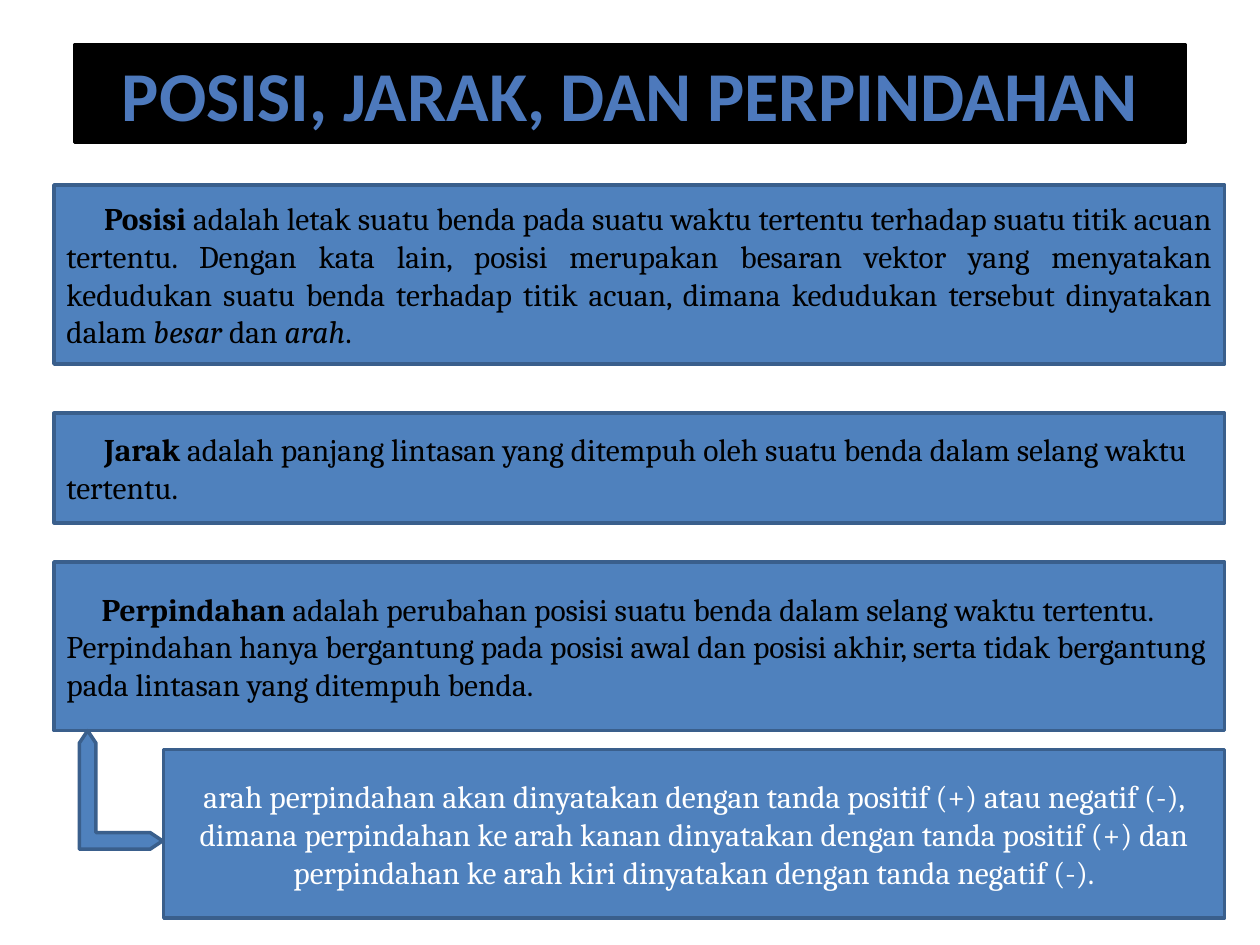
from pptx import Presentation
from pptx.dml.color import RGBColor
from pptx.enum.shapes import MSO_SHAPE
from pptx.enum.text import MSO_ANCHOR, MSO_AUTO_SIZE, PP_ALIGN
from pptx.util import Cm, Pt

RECTANGLE, CORNER_ARROW = MSO_SHAPE.RECTANGLE, MSO_SHAPE.LEFT_UP_ARROW
LEFT, CENTER, JUSTIFY = PP_ALIGN.LEFT, PP_ALIGN.CENTER, PP_ALIGN.JUSTIFY
MIDDLE = MSO_ANCHOR.MIDDLE
NO_AUTOFIT = MSO_AUTO_SIZE.NONE

BLACK = RGBColor(0x00, 0x00, 0x00)
WHITE = RGBColor(0xFF, 0xFF, 0xFF)
BLUE = RGBColor(0x4F, 0x81, 0xBD)
DARK_BLUE = RGBColor(0x3A, 0x5F, 0x8C)
TITLE_BLUE = RGBColor(0x4D, 0x79, 0xBC)

TITLE_ONLY = 5
BOX_LEFT, BOX_WIDTH = 1.09, 23.6
NOTE_LEFT = 3.3


def add_text(paragraph, text, font="Cambria", size=18, color=BLACK, bold=False, italic=False):
    run = paragraph.add_run()
    run.text = text
    run.font.name = font
    run.font.size = Pt(size)
    run.font.color.rgb = color
    run.font.bold = bold
    run.font.italic = italic


class SlideBuilder:
    line_width = Pt(2)

    def __init__(self, slide):
        self.slide = slide

    def paint(self, shape, fill, line):
        shape.fill.solid()
        shape.fill.fore_color.rgb = fill
        shape.line.color.rgb = line
        shape.line.width = self.line_width

    def title(self, text, left, top, width, height):
        heading = self.slide.shapes.title
        heading.left, heading.top = Cm(left), Cm(top)
        heading.width, heading.height = Cm(width), Cm(height)
        self.paint(heading, BLACK, BLACK)
        frame = heading.text_frame
        frame.auto_size = NO_AUTOFIT
        frame.vertical_anchor = MIDDLE
        frame.paragraphs[0].alignment = CENTER
        add_text(frame.paragraphs[0], text, font="Calibri", size=40,
                 color=TITLE_BLUE, bold=True)

    def shape(self, kind, left, top, width, height):
        shape = self.slide.shapes.add_shape(kind, Cm(left), Cm(top), Cm(width), Cm(height))
        shape.shadow.inherit = False
        self.paint(shape, BLUE, DARK_BLUE)
        return shape

    def box(self, parts, top, height, left=BOX_LEFT, align=LEFT, indent=0, color=BLACK):
        """Draw a box that ends at the common right edge; parts are (text, format) pairs."""
        width = BOX_LEFT + BOX_WIDTH - left
        frame = self.shape(RECTANGLE, left, top, width, height).text_frame
        frame.word_wrap = True
        frame.vertical_anchor = MIDDLE
        paragraph = frame.paragraphs[0]
        paragraph.alignment = align
        if indent:
            properties = paragraph._p.get_or_add_pPr()
            properties.set("marL", "0")
            properties.set("indent", str(Cm(indent)))
        for text, style in parts:
            add_text(paragraph, text, color=color, **style)

    def corner_arrow(self, left, top, width, height, adjustments):
        arrow = self.shape(CORNER_ARROW, left, top, width, height)
        for index, value in enumerate(adjustments):
            arrow.adjustments[index] = value
        arrow._element.spPr.get_or_add_xfrm().set("flipH", "1")


def main():
    presentation = Presentation()
    presentation.slide_width, presentation.slide_height = Cm(25.4), Cm(19.05)
    layout = presentation.slide_layouts[TITLE_ONLY]
    builder = SlideBuilder(presentation.slides.add_slide(layout))
    plain, bold, italic = {}, {"bold": True}, {"italic": True}

    builder.title("POSISI, JARAK, DAN PERPINDAHAN", 1.5, 0.91, 22.4, 1.96)

    # Definitions
    builder.box([
        ("Posisi", bold),
        (" adalah letak suatu benda pada suatu waktu tertentu terhadap suatu titik acuan "
         "tertentu. Dengan kata lain, posisi merupakan besaran vektor yang menyatakan "
         "kedudukan suatu benda terhadap titik acuan, dimana kedudukan tersebut dinyatakan "
         "dalam ", plain),
        ("besar", italic),
        (" dan ", plain),
        ("arah", italic),
        (".", plain),
    ], top=3.73, height=3.61, align=JUSTIFY, indent=0.76)
    builder.box([
        ("Jarak", bold),
        (" adalah panjang lintasan yang ditempuh oleh suatu benda dalam selang waktu "
         "tertentu.", plain),
    ], top=8.33, height=2.21, indent=0.76)
    builder.box([
        ("Perpindahan ", bold),
        ("adalah perubahan posisi suatu benda dalam selang waktu tertentu. Perpindahan "
         "hanya bergantung pada posisi awal dan posisi akhir, serta tidak bergantung pada "
         "lintasan yang ditempuh benda.", plain),
    ], top=11.33, height=3.4, indent=0.71)

    # Note on the sign of a displacement
    builder.box([
        ("arah perpindahan akan dinyatakan dengan tanda positif (+) atau negatif (-), "
         "dimana perpindahan ke arah kanan dinyatakan dengan tanda positif (+) dan "
         "perpindahan ke arah kiri dinyatakan dengan tanda negatif (-).", plain),
    ], top=15.11, height=3.4, left=NOTE_LEFT, align=CENTER, color=WHITE)
    builder.corner_arrow(1.6, 14.73, 1.68, 2.39, (0.2, 0.1, 0.15))

    presentation.save("out.pptx")


if __name__ == "__main__":
    main()
